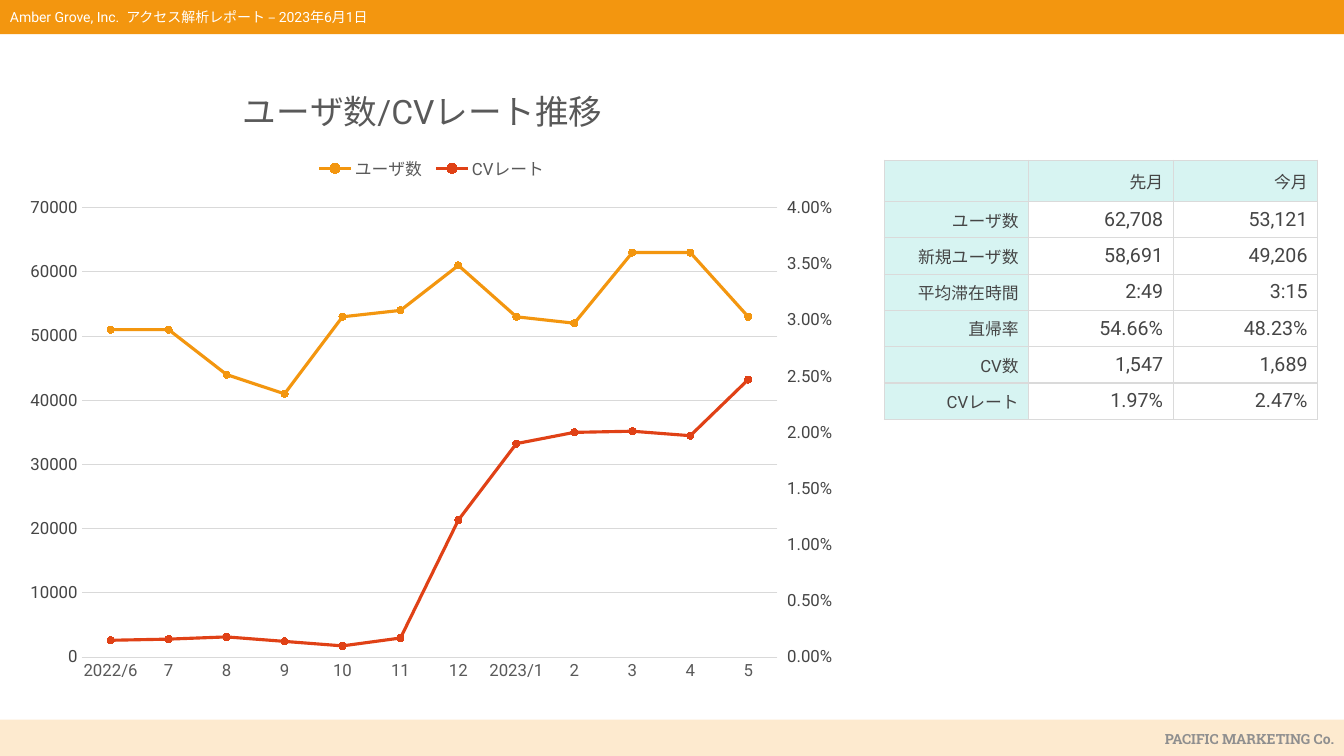
"""Build the access report slide with a user / CV rate chart and a monthly table."""
import copy
from dataclasses import dataclass

import pptx
import pptx.chart.data
import pptx.dml.color
import pptx.enum.chart
import pptx.enum.shapes
import pptx.enum.text
import pptx.oxml
import pptx.oxml.ns
import pptx.util

Inches, Pt, qn = pptx.util.Inches, pptx.util.Pt, pptx.oxml.ns.qn
rgb = pptx.dml.color.RGBColor.from_string
ALIGN = pptx.enum.text.PP_ALIGN

HEADER = "Amber Grove, Inc.  アクセス解析レポート – 2023年6月1日"
FOOTER = "PACIFIC MARKETING Co."
CHART_TITLE = "ユーザ数/CVレート推移"
MONTHS = ["2022/6", "7", "8", "9", "10", "11", "12", "2023/1", "2", "3", "4", "5"]
USERS = ("ユーザ数", [51000, 51000, 44000, 41000, 53000, 54000,
                  61000, 53000, 52000, 63000, 63000, 53000])
CV_RATE = ("CVレート", [0.0015, 0.0016, 0.0018, 0.0014, 0.001, 0.0017,
                    0.0122, 0.019, 0.02, 0.0201, 0.0197, 0.0247])
METRICS = [
    ("", "先月", "今月"),
    ("ユーザ数", "62,708", "53,121"),
    ("新規ユーザ数", "58,691", "49,206"),
    ("平均滞在時間", "2:49", "3:15"),
    ("直帰率", "54.66%", "48.23%"),
    ("CV数", "1,547", "1,689"),
    ("CVレート", "1.97%", "2.47%"),
]


@dataclass(frozen=True)
class Theme:
    font: str = "Roboto"
    footer_font: str = "Roboto Slab"
    orange: str = "F3960F"
    red: str = "E04116"
    cream: str = "FDEACF"
    mint: str = "D7F4F2"
    white: str = "FFFFFF"
    text: str = "454545"
    soft_text: str = "595959"
    footer_text: str = "8F8F8F"
    grid: str = "D9D9D9"
    border: str = "DADADA"
    title_size: int = 24
    value_size: int = 14
    label_size: int = 12
    band_size: int = 10


THEME = Theme()


def set_font(font, size, color, name=THEME.font, bold=False):
    font.size, font.name, font.bold = Pt(size), name, bold
    font.color.rgb = rgb(color)


def add_band(slide, top, height, fill):
    band = slide.shapes.add_shape(pptx.enum.shapes.MSO_SHAPE.RECTANGLE, 0, Inches(top),
                                  Inches(13.33), Inches(height))
    band.shadow.inherit = False
    band.fill.solid()
    band.fill.fore_color.rgb = rgb(fill)
    band.line.fill.background()


def add_band_text(slide, text, left, top, align, color, name, bold):
    frame = slide.shapes.add_textbox(Inches(left), Inches(top), Inches(5.31),
                                     Inches(0.27)).text_frame
    frame.word_wrap = True
    frame.text = text
    frame.paragraphs[0].alignment = align
    set_font(frame.paragraphs[0].font, THEME.band_size, color, name, bold)


def place(part, target, **inches):
    """Give a chart part a manual layout, turning inches into fractions of the chart."""
    for old in part.findall(qn("c:layout")):
        part.remove(old)
    inner = '<c:layoutTarget val="inner"/>' if target == "inner" else ""
    modes = "".join(f'<c:{axis}Mode val="edge"/>' for axis in "xy")
    whole = {"x": 8.29, "w": 8.29, "y": 6.32, "h": 6.32}
    sizes = "".join(f'<c:{key} val="{value / whole[key]:.4f}"/>' for key, value in inches.items())
    layout = pptx.oxml.parse_xml(
        f'<c:layout {pptx.oxml.ns.nsdecls("c")}><c:manualLayout>{inner}{modes}{sizes}'
        '</c:manualLayout></c:layout>')
    if target == "inner":
        part.insert(0, layout)
    else:
        part.find(qn("c:tx" if target == "title" else "c:legendPos")).addnext(layout)


def add_right_axis(plot_area):
    """Move the second line to its own axis on the right."""
    left_lines = plot_area.find(qn("c:lineChart"))
    right_lines = copy.deepcopy(left_lines)
    left_lines.remove(left_lines.findall(qn("c:ser"))[1])
    right_lines.remove(right_lines.findall(qn("c:ser"))[0])
    left_lines.addnext(right_lines)
    left_value = plot_area.find(qn("c:valAx"))
    months = copy.deepcopy(plot_area.find(qn("c:catAx")))
    rates = copy.deepcopy(left_value)
    left_value.addnext(rates)
    rates.addnext(months)
    for axis, own, other in ((months, "5001", "5002"), (rates, "5002", "5001")):
        axis.find(qn("c:axId")).set("val", own)
        axis.find(qn("c:crossAx")).set("val", other)
    for axis_id, value in zip(right_lines.findall(qn("c:axId")), ("5001", "5002")):
        axis_id.set("val", value)
    months.find(qn("c:delete")).set("val", "1")
    rates.remove(rates.find(qn("c:majorGridlines")))
    rates.find(qn("c:numFmt")).set("formatCode", "0.00%")
    rates.find(qn("c:scaling")).find(qn("c:max")).set("val", "0.04")
    for tag, value in (("axPos", "r"), ("majorTickMark", "out"),
                       ("crosses", "max"), ("majorUnit", "0.005")):
        rates.find(qn(f"c:{tag}")).set("val", value)


def add_trend_chart(slide):
    trend = pptx.chart.data.CategoryChartData()
    trend.categories = MONTHS
    trend.add_series(*USERS, number_format="General")
    trend.add_series(*CV_RATE, number_format="0.00%")
    enums = pptx.enum.chart
    chart = slide.shapes.add_chart(enums.XL_CHART_TYPE.LINE_MARKERS, Inches(0.13), Inches(0.57),
                                   Inches(8.29), Inches(6.32), trend).chart
    set_font(chart.font, THEME.band_size, THEME.text)
    chart.plots[0].vary_by_categories = False
    for series, color in zip(chart.plots[0].series, (THEME.orange, THEME.red)):
        series.smooth = False
        series.format.line.width = Pt(2.25)
        series.format.line.color.rgb = rgb(color)
        series.marker.style = enums.XL_MARKER_STYLE.CIRCLE
        series.marker.size = 5
        series.marker.format.fill.solid()
        series.marker.format.fill.fore_color.rgb = rgb(color)
        series.marker.format.line.color.rgb = rgb(color)

    chart.has_title = True
    chart.chart_title.text_frame.text = CHART_TITLE
    set_font(chart.chart_title.text_frame.paragraphs[0].font, THEME.title_size, THEME.soft_text)
    chart.has_legend = True
    chart.legend.position = enums.XL_LEGEND_POSITION.TOP
    chart.legend.include_in_layout = False
    set_font(chart.legend.font, THEME.label_size, THEME.soft_text)

    months, users = chart.category_axis, chart.value_axis
    for axis, color in ((months, THEME.soft_text), (users, THEME.text)):
        axis.major_tick_mark = axis.minor_tick_mark = enums.XL_TICK_MARK.NONE
        set_font(axis.tick_labels.font, THEME.label_size, color)
    users.minimum_scale, users.maximum_scale, users.major_unit = 0, 70000, 10000
    users.tick_labels.number_format = "General"
    users.tick_labels.number_format_is_linked = False
    users.format.line.fill.background()
    users.has_major_gridlines = True
    for line in (months.format.line, users.major_gridlines.format.line):
        line.width = Pt(0.75)
        line.color.rgb = rgb(THEME.grid)

    body = chart.element.find(qn("c:chart"))
    plot_area = body.find(qn("c:plotArea"))
    add_right_axis(plot_area)
    place(plot_area, "inner", x=0.68, y=1.49, w=6.9, h=4.46)
    place(body.find(qn("c:title")), "title", x=2.22, y=0.18)
    place(body.find(qn("c:legend")), "legend", x=2.95, y=0.94, w=2.4, h=0.32)


def add_borders(cell):
    properties = cell._tc.get_or_add_tcPr()
    for side in "LRTB":
        properties.append(pptx.oxml.parse_xml(
            f'<a:ln{side} {pptx.oxml.ns.nsdecls("a")} w="{Pt(1)}"><a:solidFill>'
            f'<a:srgbClr val="{THEME.border}"/></a:solidFill></a:ln{side}>'))


def add_metrics_table(slide):
    rows, columns = len(METRICS), len(METRICS[0])
    table = slide.shapes.add_table(rows, columns, Inches(8.77), Inches(1.59),
                                   Inches(4.3), Inches(2.57)).table
    table.first_row = table.horz_banding = False
    for column in table.columns:
        column.width = Inches(4.3 / columns)
    for r, values in enumerate(METRICS):
        table.rows[r].height = Inches(0.36 if r else 0.41)
        for c, value in enumerate(values):
            cell = table.cell(r, c)
            is_label = r == 0 or c == 0
            add_borders(cell)
            if is_label:
                cell.fill.solid()
                cell.fill.fore_color.rgb = rgb(THEME.mint)
            else:
                cell.fill.background()
            cell.text = value
            cell.vertical_anchor = pptx.enum.text.MSO_ANCHOR.MIDDLE
            cell.text_frame.paragraphs[0].alignment = ALIGN.RIGHT
            set_font(cell.text_frame.paragraphs[0].font,
                     THEME.label_size if is_label else THEME.value_size, THEME.text)


def main():
    deck = pptx.Presentation()
    deck.slide_width, deck.slide_height = Inches(13.33), Inches(7.5)
    slide = deck.slides.add_slide(deck.slide_layouts[6])
    add_band(slide, 7.14, 0.36, THEME.cream)
    add_band(slide, 0, 0.34, THEME.orange)
    add_band_text(slide, HEADER, 0, 0.04, ALIGN.LEFT, THEME.white, THEME.font, False)
    add_band_text(slide, FOOTER, 8.02, 7.2, ALIGN.RIGHT, THEME.footer_text, THEME.footer_font, True)
    add_trend_chart(slide)
    add_metrics_table(slide)
    deck.save("out.pptx")


if __name__ == "__main__":
    main()
